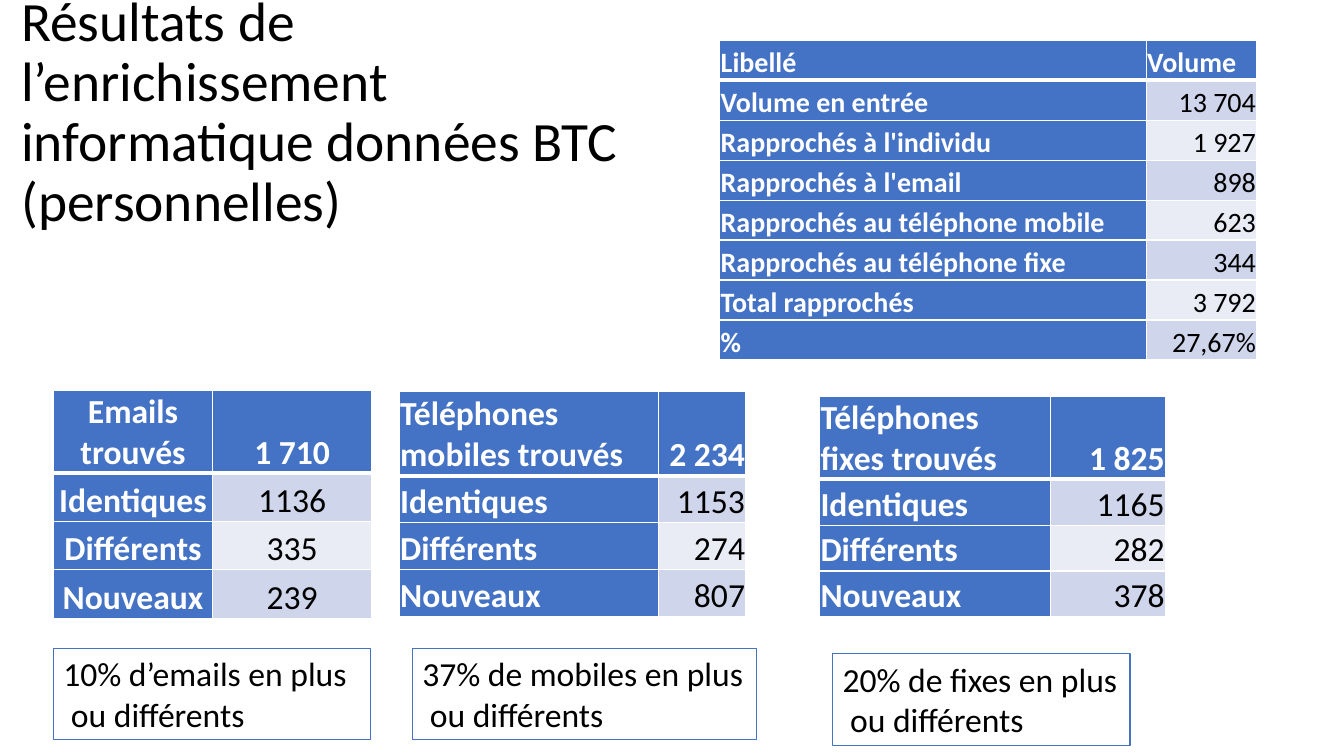
from dataclasses import dataclass

from lxml import etree
from pptx import Presentation
from pptx import util as u
from pptx.dml.color import RGBColor
from pptx.enum import text
from pptx.oxml import ns

BLUE = RGBColor(0x44, 0x72, 0xC4)
DARK = RGBColor(0xCF, 0xD5, 0xEA)
LIGHT = RGBColor(0xE9, 0xEB, 0xF5)
WHITE = RGBColor(0xFF, 0xFF, 0xFF)
BLACK = RGBColor(0, 0, 0)
FONT = "Calibri"
LEFT, MID, RIGHT = text.PP_ALIGN.LEFT, text.PP_ALIGN.CENTER, text.PP_ALIGN.RIGHT
WIDE, HIGH = u.Inches(13.333), u.Inches(7.5)


@dataclass
class Grid:
    x: float
    y: float
    cols: tuple[float, float]
    head: float
    row: float
    size: int
    align: tuple
    data: list[tuple[str, str]]


@dataclass
class Note:
    x: float
    y: float
    w: float
    lead: str
    wrap: bool = False


def counts(title: str, total: str, *values: str) -> list[tuple[str, str]]:
    names = ("Identiques", "Différents", "Nouveaux")
    return [(title, total), *zip(names, values)]


GRIDS = [
    Grid(53.55, 5.33, (31.73, 8.25), 5.29, 5.29, 20, (LEFT, RIGHT), [
        ("Libellé", "Volume"),
        ("Volume en entrée", "13 704"),
        ("Rapprochés à l'individu", "1 927"),
        ("Rapprochés à l'email", "898"),
        ("Rapprochés au téléphone mobile", "623"),
        ("Rapprochés au téléphone fixe", "344"),
        ("Total rapprochés", "3 792"),
        ("%", "27,67%"),
    ]),
    Grid(29.7, 51.75, (19.28, 6.53), 11.2, 6.22, 24, (LEFT, RIGHT),
         counts("Téléphones mobiles trouvés", "2 234", "1153", "274", "807")),
    Grid(3.98, 51.6, (11.84, 11.84), 10.93, 6.4, 24, (MID, MID),
         counts("Emails trouvés", "1 710", "1136", "335", "239")),
    Grid(60.98, 52.4, (17.18, 8.58), 10.93, 6.08, 24, (LEFT, RIGHT),
         counts("Téléphones fixes trouvés", "1 825", "1165", "282", "378")),
]

NOTES = [
    Note(30.68, 85.75, 25.58, "37% de mobiles en plus"),
    Note(61.95, 86.5, 22.13, "20% de fixes en plus"),
    Note(3.98, 85.75, 23.63, "10% d’emails en plus", True),
]


def across(share: float) -> int:
    return u.Emu(round(WIDE * share / 100))


def down(share: float) -> int:
    return u.Emu(round(HIGH * share / 100))


def style(para, size: float, color: RGBColor, bold: bool = False) -> None:
    font = para.font
    font.name, font.size, font.bold = FONT, u.Pt(size), bold
    font.color.rgb = color


def edge(cell, side: str, width: int) -> None:
    props = cell._tc.get_or_add_tcPr()
    line = etree.SubElement(props, ns.qn(f"a:ln{side}"), w=str(u.Pt(width)))
    fill = etree.SubElement(line, ns.qn("a:solidFill"))
    etree.SubElement(fill, ns.qn("a:srgbClr"), val=str(WHITE))


def draw_cell(cell, grid: Grid, row: int, col: int) -> None:
    for side in "LRTB":
        thick = (row, side) in ((0, "B"), (1, "T"))
        edge(cell, side, 3 if thick else 1)
    label = row == 0 or col == 0
    cell.fill.solid()
    cell.fill.fore_color.rgb = BLUE if label else DARK if row % 2 else LIGHT
    cell.margin_left = cell.margin_right = cell.margin_top = u.Inches(0.01)
    cell.margin_bottom = 0
    cell.vertical_anchor = text.MSO_ANCHOR.BOTTOM
    cell.text = grid.data[row][col]
    para = cell.text_frame.paragraphs[0]
    para.alignment = LEFT if cell.text == "Volume" else grid.align[col]
    style(para, grid.size, WHITE if label else BLACK, label)


def draw_grid(slide, grid: Grid) -> None:
    count = len(grid.data)
    tall = grid.head + grid.row * (count - 1)
    table = slide.shapes.add_table(count, 2, across(grid.x), down(grid.y),
                                   across(sum(grid.cols)), down(tall)).table
    for col, width in zip(table.columns, grid.cols):
        col.width = across(width)
    for i, row in enumerate(table.rows):
        row.height = down(grid.row if i else grid.head)
        for j, cell in enumerate(row.cells):
            draw_cell(cell, grid, i, j)


def draw_note(slide, note: Note) -> None:
    box = slide.shapes.add_textbox(across(note.x), down(note.y),
                                   across(note.w), down(12.12))
    box.line.color.rgb = BLUE
    box.line.width = u.Pt(0.75)
    frame = box.text_frame
    frame.word_wrap = note.wrap
    frame.auto_size = text.MSO_AUTO_SIZE.SHAPE_TO_FIT_TEXT
    frame.text = f"{note.lead}\n ou différents"
    for para in frame.paragraphs:
        style(para, 24, BLACK)


def draw_title(slide) -> None:
    title = slide.shapes.title
    title.left, title.top = across(0.83), down(5.33)
    title.width, title.height = across(49.95), down(19.33)
    frame = title.text_frame
    frame.text = "Résultats de l’enrichissement informatique données BTC\v(personnelles)"
    frame.word_wrap = True
    frame.auto_size = text.MSO_AUTO_SIZE.NONE
    frame.vertical_anchor = text.MSO_ANCHOR.MIDDLE
    para = frame.paragraphs[0]
    para.alignment, para.line_spacing = LEFT, 0.9
    style(para, 39.6, BLACK)


def main() -> None:
    deck = Presentation()
    deck.slide_width, deck.slide_height = WIDE, HIGH
    slide = deck.slides.add_slide(deck.slide_layouts[5])
    draw_title(slide)
    for grid in GRIDS:
        draw_grid(slide, grid)
    for note in NOTES:
        draw_note(slide, note)
    deck.save("out.pptx")


if __name__ == "__main__":
    main()
